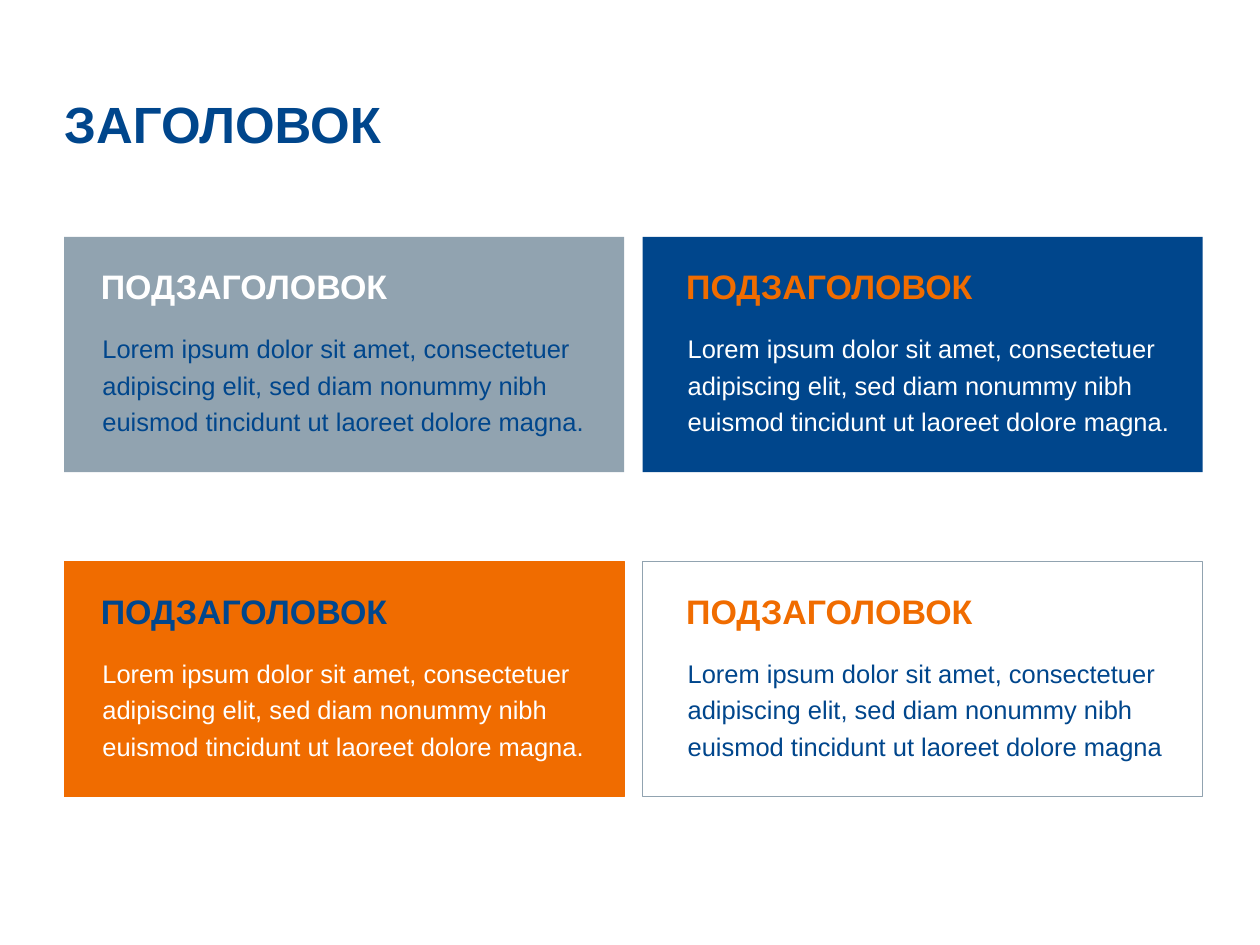
from dataclasses import dataclass

from pptx import Presentation
from pptx.dml.color import RGBColor
from pptx.enum.shapes import MSO_SHAPE
from pptx.enum.text import MSO_ANCHOR, MSO_AUTO_SIZE as AutoSize, PP_ALIGN
from pptx.util import Inches, Pt

BLUE = RGBColor(0x00, 0x46, 0x8C)
ORANGE = RGBColor(0xF0, 0x6C, 0x00)
GREY = RGBColor(0x91, 0xA3, 0xB0)
WHITE = RGBColor(0xFF, 0xFF, 0xFF)

SLIDE_WIDTH, SLIDE_HEIGHT = 16.49, 12.37
GRID_LEFT, GRID_TOP = 0.84, 3.1
COLUMN_STEP, ROW_STEP = 7.57, 4.25
CARD_WIDTH, CARD_HEIGHT = 7.33, 3.08
CARD_INSETS = (0.48, 0.57)

LOREM = (
    "Lorem ipsum dolor sit amet, consectetuer adipiscing elit, "
    "sed diam nonummy nibh euismod tincidunt ut laoreet dolore magna"
)


@dataclass
class Card:
    """Colours and body text of one card."""

    fill: RGBColor
    line: RGBColor | None
    heading: RGBColor
    body: RGBColor
    text: str = LOREM + "."


CARDS = [
    [Card(GREY, None, WHITE, BLUE), Card(BLUE, None, ORANGE, WHITE)],
    [Card(ORANGE, ORANGE, BLUE, WHITE), Card(WHITE, GREY, ORANGE, BLUE, LOREM)],
]


def write_text(shape, text, size, color, bold=False, indent=0):
    """Fill a shape with one left-aligned paragraph anchored at the top."""
    frame = shape.text_frame
    frame.text = text
    frame.word_wrap = True
    frame.auto_size = AutoSize.NONE
    frame.vertical_anchor = MSO_ANCHOR.TOP
    frame.margin_left = Inches(indent)
    frame.margin_right = frame.margin_bottom = 0
    frame.margin_top = Inches(0.02)
    paragraph = frame.paragraphs[0]
    paragraph.alignment = PP_ALIGN.LEFT
    font = paragraph.runs[0].font
    font.name, font.size, font.bold = "Arial", Pt(size), bold
    font.color.rgb = color
    return paragraph


def add_title(slide, left, top, width, height):
    """Place and format the slide title."""
    title = slide.shapes.title
    title.left, title.top = Inches(left), Inches(top)
    title.width, title.height = Inches(width), Inches(height)
    write_text(title, "ЗАГОЛОВОК", 48, BLUE, bold=True)


def add_card(slide, card, left, top, inset):
    """Draw a card with its heading and body text inside the given box."""
    panel = slide.shapes.add_shape(
        MSO_SHAPE.RECTANGLE,
        Inches(left), Inches(top), Inches(CARD_WIDTH), Inches(CARD_HEIGHT),
    )
    panel.shadow.inherit = False
    panel.fill.solid()
    panel.fill.fore_color.rgb = card.fill
    if card.line is None:
        panel.line.fill.background()
    else:
        panel.line.color.rgb = card.line
        panel.line.width = Pt(0.75)

    text_left = Inches(left + inset)
    heading = slide.shapes.add_textbox(
        text_left, Inches(top + 0.36), Inches(3.94), Inches(0.56)
    )
    write_text(heading, "ПОДЗАГОЛОВОК", 32, card.heading, bold=True)
    body = slide.shapes.add_textbox(
        text_left, Inches(top + 1.16), Inches(6.6), Inches(1.48)
    )
    paragraph = write_text(body, card.text, 24, card.body, indent=0.02)
    paragraph.line_spacing = 1.2


def add_card_grid(slide, left, top):
    """Lay the cards out in rows and columns."""
    for row, cards in enumerate(CARDS):
        for column, card in enumerate(cards):
            add_card(
                slide, card,
                left + column * COLUMN_STEP, top + row * ROW_STEP,
                CARD_INSETS[column],
            )


def main():
    """Build the slide and save it."""
    presentation = Presentation()
    presentation.slide_width = Inches(SLIDE_WIDTH)
    presentation.slide_height = Inches(SLIDE_HEIGHT)
    slide = presentation.slides.add_slide(presentation.slide_layouts[5])
    add_title(slide, GRID_LEFT, 1.19, 4.83, 0.83)
    add_card_grid(slide, GRID_LEFT, GRID_TOP)
    presentation.save("out.pptx")


if __name__ == "__main__":
    main()
